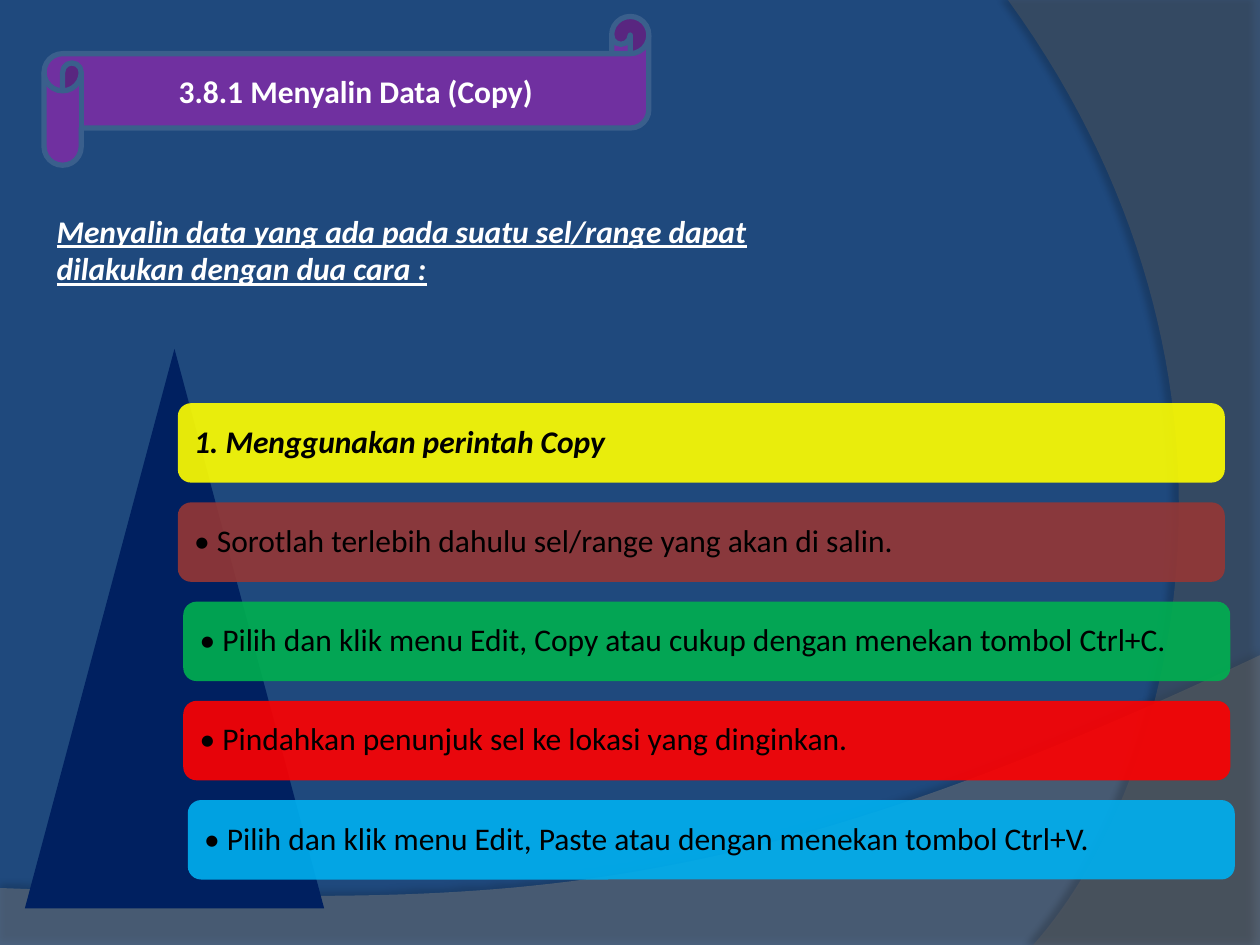
"""Build the slide on copying data with the Copy command."""
from dataclasses import dataclass

from lxml.etree import SubElement
from pptx import Presentation
from pptx.dml.color import RGBColor
from pptx.enum.shapes import MSO_SHAPE
from pptx.enum.text import MSO_ANCHOR, PP_ALIGN
from pptx.oxml.ns import qn
from pptx.util import Pt


@dataclass(frozen=True)
class Theme:
    """Colours, font and sizes of the slide."""
    background: str = "1F497D"
    wave: str = "7F7F7F"
    arc: str = "5E5E5E"
    shadow: str = "000000"
    scroll: str = "7030A0"
    scroll_edge: str = "3A5F8C"
    triangle: str = "002060"
    steps: tuple = ("FFFF00", "953735", "00B050", "FF0000", "00B0F0")
    light: str = "FFFFFF"
    dark: str = "000000"
    font: str = "Calibri"
    size: float = 18


THEME = Theme()
STEPS = (
    "1. Menggunakan perintah Copy",
    "• Sorotlah terlebih dahulu sel/range yang akan di salin.",
    "• Pilih dan klik menu Edit, Copy atau cukup dengan menekan tombol Ctrl+C.",
    "• Pindahkan penunjuk sel ke lokasi yang dinginkan.",
    "• Pilih dan klik menu Edit, Paste atau dengan menekan tombol Ctrl+V.",
)


def apply_format(target, values):
    """Set each named attribute on the target."""
    for name, value in values.items():
        setattr(target, name, value)


def paint(shape, color, opacity=100):
    """Give a shape a solid fill, no line and no shadow."""
    shape.shadow.inherit = False
    shape.line.fill.background()
    shape.fill.solid()
    shape.fill.fore_color.rgb = RGBColor.from_string(color)
    if opacity < 100:
        tint = shape.fill._xPr.find(qn("a:solidFill"))[0]
        SubElement(tint, qn("a:alpha"), val=str(opacity * 1000))


def cast_shadow(shape, opacity, distance, degrees):
    """Add a soft outer shadow to a shape."""
    effects = shape._element.spPr.find(qn("a:effectLst"))
    outer = SubElement(effects, qn("a:outerShdw"), blurRad=str(Pt(4)),
                       dist=str(Pt(distance)), dir=str(degrees * 60000),
                       algn="ctr", rotWithShape="0")
    tint = SubElement(outer, qn("a:srgbClr"), val=THEME.shadow)
    SubElement(tint, qn("a:alpha"), val=str(opacity * 1000))


def write(shape, text, color, frame=None, paragraph=None, font=None):
    """Put one formatted paragraph into a shape."""
    apply_format(shape.text_frame, {"word_wrap": True, **(frame or {})})
    line = shape.text_frame.paragraphs[0]
    apply_format(line, {"alignment": PP_ALIGN.LEFT, **(paragraph or {})})
    run = line.add_run()
    run.text = text
    apply_format(run.font, {"name": THEME.font, "size": Pt(THEME.size), **(font or {})})
    run.font.color.rgb = RGBColor.from_string(color)


def add_block(slide, preset, box, color, opacity=100):
    """Add a painted preset shape in the box."""
    block = slide.shapes.add_shape(preset, *map(Pt, box))
    paint(block, color, opacity)
    return block


def bezier(start, first, second, end, count=60):
    """Return points along a cubic curve."""
    fractions = [step / count for step in range(count + 1)]
    return [tuple((1 - t) ** 3 * a + 3 * (1 - t) ** 2 * t * b
                  + 3 * (1 - t) * t ** 2 * c + t ** 3 * d
                  for a, b, c, d in zip(start, first, second, end))
            for t in fractions]


def add_sweep(slide, box, corners, curve, color, opacity, shadow):
    """Add a translucent area with one curved edge, in fractions of the box."""
    left, top, width, height = box
    points = [(Pt(left + x * width), Pt(top + y * height))
              for x, y in corners + bezier(*curve)]
    builder = slide.shapes.build_freeform(*points[0])
    builder.add_line_segments(points[1:], close=True)
    sweep = builder.convert_to_shape()
    paint(sweep, color, opacity)
    cast_shadow(sweep, *shadow)


def add_backdrop(slide, box):
    """Add the background colour and the two sweeping areas."""
    left, top, width, height = box
    fill = slide.background.fill
    fill.solid()
    fill.fore_color.rgb = RGBColor.from_string(THEME.background)
    add_sweep(slide, (left, top + 374.4, width, 166.3), [(0, 0.8), (0, 1), (1, 1)],
              [(1, 0), (0.56, 0.9), (0.39, 0.86), (0, 0.8)],
              THEME.wave, 45, (35, 3.5, 270))
    add_sweep(slide, (left + 576, top, width - 576, height), [(1, 0), (1, 1)],
              [(0.1, 1), (0.67, 0.83), (1.09, 0.4), (0, 0)],
              THEME.arc, 40, (45, 4, 180))


def add_title(slide, box):
    """Add the scroll that carries the section title."""
    scroll = add_block(slide, MSO_SHAPE.HORIZONTAL_SCROLL, box, THEME.scroll)
    scroll.adjustments[0] = 0.25
    scroll.line.color.rgb = RGBColor.from_string(THEME.scroll_edge)
    scroll.line.width = Pt(3)
    write(scroll, "3.8.1 Menyalin Data (Copy)", THEME.light,
          {"vertical_anchor": MSO_ANCHOR.MIDDLE},
          {"alignment": PP_ALIGN.CENTER}, {"bold": True})


def add_intro(slide, box):
    """Add the underlined introduction."""
    intro = slide.shapes.add_textbox(*map(Pt, box))
    write(intro, "Menyalin data yang ada pada suatu sel/range dapat "
          "dilakukan dengan dua cara :", THEME.light,
          font={"bold": True, "italic": True, "underline": True})


def add_pyramid_list(slide, box):
    """Add the triangle and the five steps laid over it."""
    left, top, width, height = box
    add_block(slide, MSO_SHAPE.ISOSCELES_TRIANGLE, (left, top, 171, height), THEME.triangle)
    bar_height, pitch, bar_width = 45.4, 56.7, 598.3
    shifts = (0, 0, 3.1, 3.1, 5.7)
    first_left = left + width - bar_width - shifts[-1]
    margins = {f"margin_{side}": Pt(7.2) for side in ("left", "right", "top", "bottom")}
    for row, (text, color, shift) in enumerate(zip(STEPS, THEME.steps, shifts)):
        bar = add_block(slide, MSO_SHAPE.ROUNDED_RECTANGLE,
                        (first_left + shift, top + 31 + row * pitch, bar_width, bar_height),
                        color, 90)
        heading = row == 0
        write(bar, text, THEME.dark,
              {"vertical_anchor": MSO_ANCHOR.MIDDLE, **margins},
              {"line_spacing": 0.9}, {"bold": heading, "italic": heading})


def main():
    """Build and save the presentation."""
    deck = Presentation()
    apply_format(deck, {"slide_width": Pt(720), "slide_height": Pt(540)})
    slide = deck.slides.add_slide(deck.slide_layouts[6])
    add_backdrop(slide, (0, 0, 720, 540))
    add_title(slide, (25.2, 9.4, 345.6, 85))
    add_intro(slide, (25.2, 117.4, 474.5, 51.1))
    add_pyramid_list(slide, (14.2, 199.4, 691.4, 319.7))
    deck.save("out.pptx")


if __name__ == "__main__":
    main()
